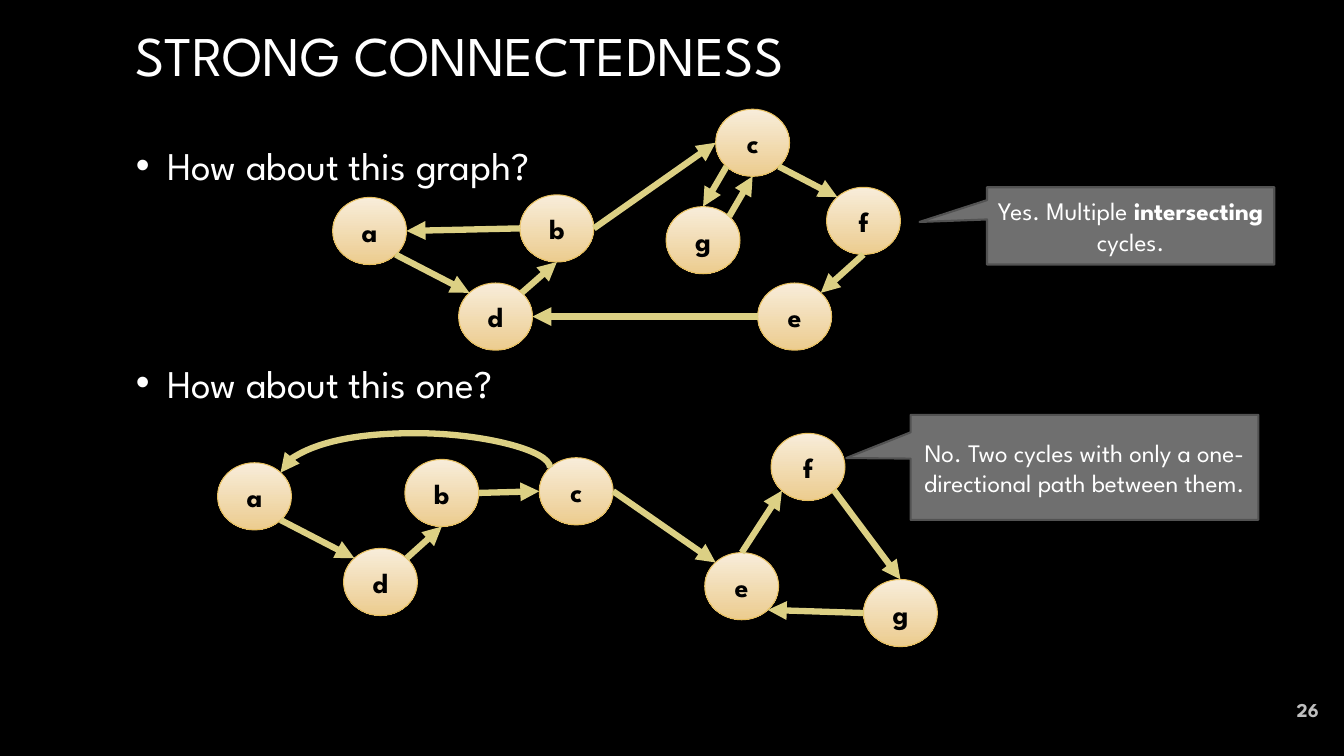
from math import cos, radians, sin

from lxml import etree
from pptx import Presentation, util as u
from pptx.dml.color import RGBColor
from pptx.enum import shapes, text
from pptx.oxml import ns

THEME = {
    "font": "League Spartan",
    "background": RGBColor.from_string("000000"),
    "light": RGBColor.from_string("FFFFFF"),
    "muted": RGBColor.from_string("BFBFBF"),
    "node": [RGBColor.from_string("F8EDDA"), RGBColor.from_string("ECCC8F")],
    "node_line": RGBColor.from_string("E7BF5F"),
    "node_text": RGBColor.from_string("000000"),
    "edge": RGBColor.from_string("DCD084"),
    "callout": RGBColor.from_string("6F6F6F"),
    "callout_line": RGBColor.from_string("525252"),
    "title_size": 40,
    "body_size": 28,
    "node_size": 20,
    "callout_size": 18,
    "number_size": 14,
}
COLUMNS = 160
NODE_WIDTH, NODE_HEIGHT = 8.8, 8
COMPASS = {"E": 0, "SE": 45, "S": 90, "SW": 135, "W": 180, "NW": 225, "N": 270, "NE": 315}

presentation = Presentation()
presentation.slide_width = u.Inches(13.33)
presentation.slide_height = u.Inches(7.5)
CELL = presentation.slide_width / COLUMNS
slide = presentation.slides.add_slide(presentation.slide_layouts[5])
slide.background.fill.solid()
slide.background.fill.fore_color.rgb = THEME["background"]


def rim(center, side):
    angle = radians(COMPASS[side])
    return center[0] + NODE_WIDTH / 2 * cos(angle), center[1] + NODE_HEIGHT / 2 * sin(angle)


def write(shape, paragraphs, size, color, align, bold=False):
    frame = shape.text_frame
    frame.word_wrap = True
    frame.auto_size = text.MSO_AUTO_SIZE.NONE
    frame.vertical_anchor = text.MSO_ANCHOR.MIDDLE
    for index, runs in enumerate(paragraphs):
        paragraph = frame.add_paragraph() if index else frame.paragraphs[0]
        paragraph.alignment = align
        for run_index, words in enumerate(runs):
            run = paragraph.add_run()
            run.text = words
            formats = {"name": THEME["font"], "size": u.Pt(size), "bold": bold or run_index == 1}
            for name, value in formats.items():
                setattr(run.font, name, value)
            run.font.color.rgb = color


title = slide.shapes.title
title_box = {"left": 14.9, "top": -0.2, "width": 130, "height": 13.4}
for name, value in title_box.items():
    setattr(title, name, u.Emu(int(value * CELL)))
write(title, [["STRONG CONNECTEDNESS"]], THEME["title_size"], THEME["light"], text.PP_ALIGN.LEFT)

questions = slide.shapes.add_textbox(*[int(n * CELL) for n in (15, 16.2, 130, 60.4)])
write(questions, [["How about this graph?"], ["How about this one?"]],
      THEME["body_size"], THEME["light"], text.PP_ALIGN.LEFT)
questions.text_frame.vertical_anchor = text.MSO_ANCHOR.TOP
for paragraph, gap in zip(questions.text_frame.paragraphs, (5.6, 116)):
    paragraph.space_before = u.Pt(gap)
    paragraph.space_after = u.Pt(6)
    properties = paragraph._p.get_or_add_pPr()
    properties.set("marL", str(u.Inches(0.31)))
    properties.set("indent", str(-u.Inches(0.31)))
    etree.SubElement(properties, ns.qn("a:buFont")).set("typeface", "Arial")
    etree.SubElement(properties, ns.qn("a:buChar")).set("char", "•")

graphs = [
    {
        "nodes": {"a": (44, 27.5), "b": (66.3, 27.2), "c": (89.6, 17), "d": (59, 37.7),
                  "e": (94.6, 37.7), "f": (102.8, 26.3), "g": (83.7, 28.6)},
        "edges": ["b E c W", "b W a E", "d NE b S", "a SE d NW", "e W d E",
                  "c SE f NW", "c SW g N", "f S e NE", "g NE c S"],
        "curves": [],
    },
    {
        "nodes": {"a": (30.3, 59.1), "b": (52.6, 58.7), "c": (68.6, 58.5), "d": (45.3, 69.3),
                  "e": (88.3, 69.8), "f": (96.2, 55.6), "g": (107.2, 73)},
        "edges": ["b E c W", "d NE b S", "a SE d NW", "f SE g N", "g W e SE",
                  "e N f SW", "c E e NW"],
        "curves": ["c NW a NE"],
    },
]
CURVE_RISE = 4.1
for graph in graphs:
    nodes = graph["nodes"]
    for label, (x, y) in nodes.items():
        box = (x - NODE_WIDTH / 2, y - NODE_HEIGHT / 2, NODE_WIDTH, NODE_HEIGHT)
        node = slide.shapes.add_shape(shapes.MSO_SHAPE.OVAL, *[int(n * CELL) for n in box])
        node.shadow.inherit = False
        node.fill.gradient()
        node.fill.gradient_angle = 270
        for stop, color, position in zip(node.fill.gradient_stops, THEME["node"], (0, 1)):
            stop.color.rgb = color
            stop.position = position
        node.line.color.rgb = THEME["node_line"]
        node.line.width = u.Pt(0.75)
        write(node, [[label]], THEME["node_size"], THEME["node_text"], text.PP_ALIGN.CENTER, True)

    for edge in graph["edges"] + graph["curves"]:
        source, source_side, target, target_side = edge.split()
        start = rim(nodes[source], source_side)
        end = rim(nodes[target], target_side)
        curved = edge in graph["curves"]
        kind = shapes.MSO_CONNECTOR.STRAIGHT
        if curved:
            kind = shapes.MSO_CONNECTOR.CURVE
            span, drop = start[0] - end[0], end[1] - start[1]
            middle = (start[0] + end[0]) / 2, (start[1] + end[1]) / 2
            start = middle[0] - drop / 2, middle[1] - span / 2
            end = middle[0] + drop / 2, middle[1] + span / 2
        connector = slide.shapes.add_connector(kind, *[int(n * CELL) for n in start + end])
        connector.line.color.rgb = THEME["edge"]
        connector.line.width = u.Pt(4.5)
        etree.SubElement(connector.line._get_or_add_ln(), ns.qn("a:tailEnd")).set("type", "triangle")
        properties = connector._element.spPr
        etree.SubElement(properties, ns.qn("a:effectLst"))
        if curved:
            for name, value in {"rot": "16200000", "flipH": "1", "flipV": "1"}.items():
                properties.find(ns.qn("a:xfrm")).set(name, value)
            guides = properties.find(ns.qn("a:prstGeom")).get_or_add_avLst()
            guide = etree.SubElement(guides, ns.qn("a:gd"))
            guide.set("name", "adj1")
            guide.set("fmla", f"val {round(-CURVE_RISE / drop * 100000)}")

callouts = [
    ((117.5, 22.3, 34.2, 9.2), (-0.735, -0.051), ["Yes. Multiple ", "intersecting", " cycles."]),
    ((108.4, 49.4, 41.4, 12.5), (-0.685, -0.089),
     ["No. Two cycles with only a one-directional path between them."]),
]
for box, pointer, runs in callouts:
    callout = slide.shapes.add_shape(
        shapes.MSO_SHAPE.RECTANGULAR_CALLOUT, *[int(n * CELL) for n in box])
    callout.shadow.inherit = False
    callout.adjustments[0], callout.adjustments[1] = pointer
    callout.fill.solid()
    callout.fill.fore_color.rgb = THEME["callout"]
    callout.line.color.rgb = THEME["callout_line"]
    callout.line.width = u.Pt(1.5)
    write(callout, [runs], THEME["callout_size"], THEME["light"], text.PP_ALIGN.CENTER)

number = slide.shapes.add_textbox(*[int(n * CELL) for n in (151, 82.1, 7.2, 4.8)])
write(number, [["26"]], THEME["number_size"], THEME["muted"], text.PP_ALIGN.RIGHT, True)

presentation.save("out.pptx")
